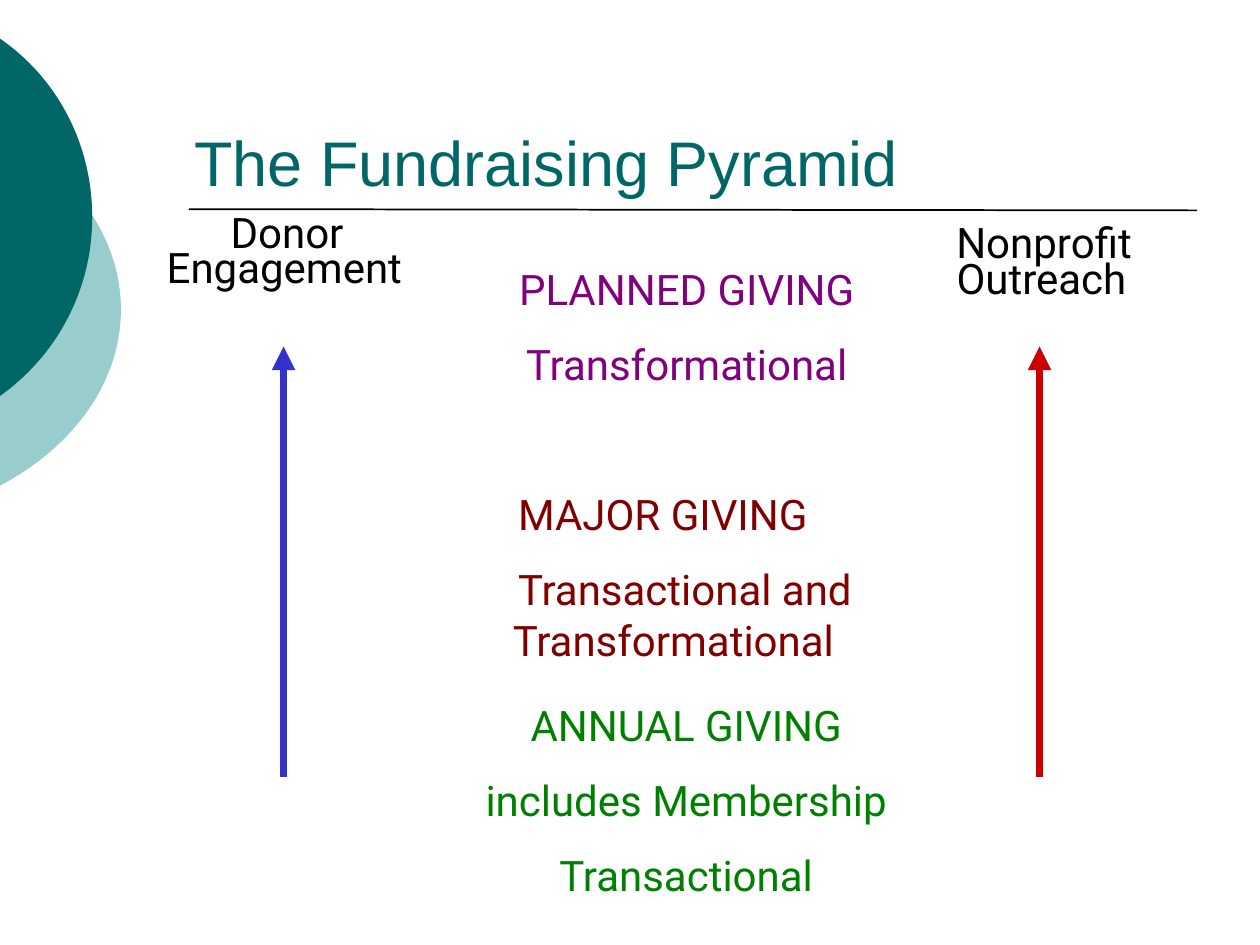
from lxml.etree import SubElement
from pptx import Presentation
from pptx.dml.color import RGBColor
from pptx.enum.shapes import MSO_CONNECTOR
from pptx.enum.text import MSO_ANCHOR, MSO_AUTO_SIZE, PP_ALIGN
from pptx.oxml.ns import qn
from pptx.util import Pt

SLIDE_SIZE = (720, 540)
CURVE_STEPS = 32
LEFT_EDGE = -0.72

ARCS = [
    {"top": 75.6, "bottom": 277.9, "right": 69.12, "control": 43.2, "bends": (98.6, 136.8, 217.4, 254.9), "color": "99CCCC"},
    {"top": 21.6, "bottom": 226.8, "right": 52.7, "control": 33.1, "bends": (44.6, 82.8, 164.9, 203), "color": "006666"},
]

LINES = [
    {"start": (108, 119.52), "end": (684, 120.24), "color": "000000", "width": 1, "arrow": False},
    {"start": (162, 444), "end": (162, 198), "color": "3333CC", "width": 4.5, "arrow": True},
    {"start": (594, 444), "end": (594, 198), "color": "CC0000", "width": 4.5, "arrow": True},
]

TITLE = {"size": 36, "name": "Arial"}
BODY = {"size": 24, "name": "Roboto"}
LEVEL = {"space_before": Pt(14)}
CENTERED = {**LEVEL, "alignment": PP_ALIGN.CENTER}
HEADING = {**CENTERED, "line_spacing": 0.7}
TOP = {"vertical_anchor": MSO_ANCHOR.TOP, "auto_size": MSO_AUTO_SIZE.SHAPE_TO_FIT_TEXT}
BOTTOM = {"vertical_anchor": MSO_ANCHOR.BOTTOM, "auto_size": MSO_AUTO_SIZE.NONE}

TEXTS = [
    (["The Fundraising Pyramid"], (108, 0, 576, 113.76), "006666", TITLE, {}, BOTTOM),
    (["ANNUAL GIVING", "includes Membership", "Transactional"],
     (221.76, 399.6, 337.68, 115.2), "008000", BODY, CENTERED, TOP),
    (["MAJOR GIVING", "Transactional and Transformational"],
     (293.04, 279.36, 205.92, 100.8), "800000", BODY, LEVEL, TOP),
    (["PLANNED GIVING", "Transformational"],
     (270, 150.48, 241.92, 72), "800080", BODY, CENTERED, TOP),
    (["Donor Engagement"], (61, 126, 203, 48.96), "000000", BODY, HEADING, TOP),
    (["Nonprofit Outreach"], (498.24, 131.76, 193.68, 48.96), "000000", BODY, HEADING, TOP),
]


def color_of(value):
    return RGBColor.from_string(value)


def set_attributes(target, values):
    for name, value in values.items():
        setattr(target, name, value)


def curve_points(start, first, second, end):
    for step in range(1, CURVE_STEPS + 1):
        t = step / CURVE_STEPS
        weights = ((1 - t) ** 3, 3 * t * (1 - t) ** 2, 3 * t * t * (1 - t), t ** 3)
        yield tuple(
            Pt(sum(weight * value for weight, value in zip(weights, values)))
            for values in zip(start, first, second, end)
        )


def add_arc(slide, arc):
    top, bottom = (LEFT_EDGE, arc["top"]), (LEFT_EDGE, arc["bottom"])
    right, control = arc["right"], arc["control"]
    middle = (right, (arc["top"] + arc["bottom"]) / 2)
    upper, upper_middle, lower_middle, lower = arc["bends"]
    points = [
        *curve_points(top, (control, upper), (right, upper_middle), middle),
        *curve_points(middle, (right, lower_middle), (control, lower), bottom),
    ]
    builder = slide.shapes.build_freeform(Pt(top[0]), Pt(top[1]))
    builder.add_line_segments(points, close=True)
    shape = builder.convert_to_shape()
    shape.shadow.inherit = False
    shape.fill.solid()
    shape.fill.fore_color.rgb = color_of(arc["color"])
    shape.line.fill.background()


def add_line(slide, line):
    ends = [Pt(value) for value in (*line["start"], *line["end"])]
    connector = slide.shapes.add_connector(MSO_CONNECTOR.STRAIGHT, *ends)
    connector.line.color.rgb = color_of(line["color"])
    connector.line.width = Pt(line["width"])
    if line["arrow"]:
        SubElement(connector.line._get_or_add_ln(), qn("a:tailEnd"), type="triangle")
    SubElement(connector._element.spPr, qn("a:effectLst"))


def add_text(slide, texts, box, color, font, paragraph_format, frame_format):
    shape = slide.shapes.add_textbox(*(Pt(value) for value in box))
    frame = shape.text_frame
    margins = dict.fromkeys(("margin_left", "margin_top", "margin_right", "margin_bottom"), 0)
    set_attributes(frame, {"word_wrap": True, **margins, **frame_format})
    for index, text in enumerate(texts):
        paragraph = frame.add_paragraph() if index else frame.paragraphs[0]
        set_attributes(paragraph, paragraph_format)
        properties = paragraph._p.get_or_add_pPr()
        properties.set("marL", "0")
        properties.set("indent", str(Pt(3)))
        run = paragraph.add_run()
        run.text = text
        set_attributes(run.font, {"name": font["name"], "size": Pt(font["size"])})
        run.font.color.rgb = color_of(color)


def main():
    presentation = Presentation()
    presentation.slide_width, presentation.slide_height = (Pt(value) for value in SLIDE_SIZE)
    slide = presentation.slides.add_slide(presentation.slide_layouts[6])
    for arc in ARCS:
        add_arc(slide, arc)
    for line in LINES:
        add_line(slide, line)
    for text in TEXTS:
        add_text(slide, *text)
    presentation.save("out.pptx")


if __name__ == "__main__":
    main()
